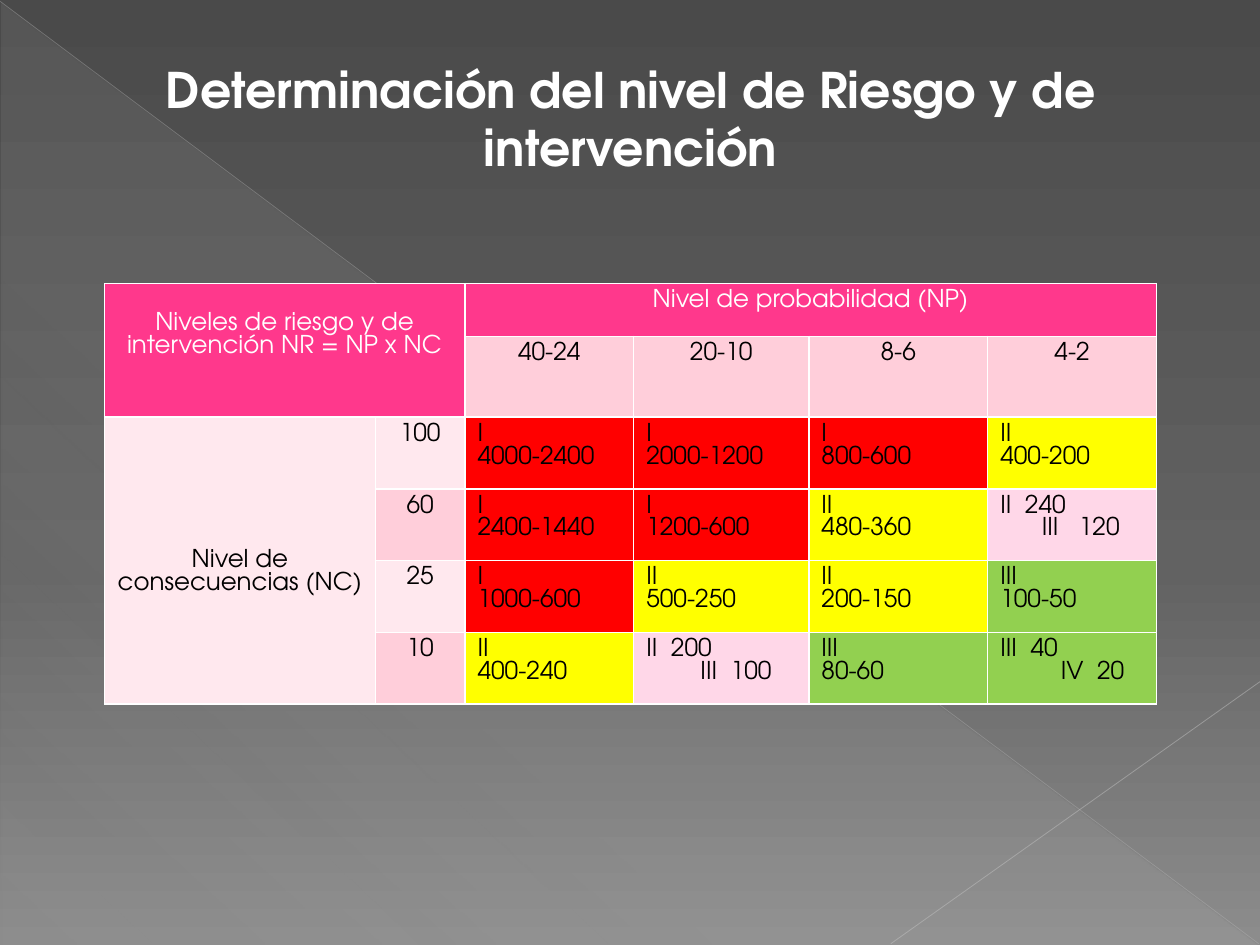
from dataclasses import dataclass
from typing import NamedTuple

from lxml.etree import SubElement
from pptx import Presentation
from pptx.dml.color import RGBColor
from pptx.enum.shapes import MSO_CONNECTOR, MSO_SHAPE
from pptx.enum.text import MSO_ANCHOR, MSO_AUTO_SIZE, PP_ALIGN
from pptx.oxml.ns import qn
from pptx.util import Inches, Pt


@dataclass(frozen=True)
class Theme:
    font: str = "TeX Gyre Adventor"
    title_size: float = 28
    table_size: float = 14
    white: str = "FFFFFF"
    black: str = "000000"
    header: str = "FF388C"
    band: str = "FFCEDA"
    pale_band: str = "FFE8EE"
    high: str = "FF0000"
    medium: str = "FFFF00"
    mixed: str = "FFD7E8"
    low: str = "92D050"


class Stop(NamedTuple):
    position: int
    color: str
    opacity: int = 100


class Ray(NamedTuple):
    start: tuple[float, float]
    end: tuple[float, float]
    color: str
    width: float
    opacity: int


class Risk(NamedTuple):
    level: str
    span: str
    fill: str
    indent: float = 0


THEME = Theme()
BACKGROUND = [Stop(0, "4A4A4A"), Stop(60, "626262"), Stop(100, "8C8C8C")]
SHEEN = [Stop(0, "D2D2D2", 10), Stop(70, "D2D2D2", 8), Stop(100, "D2D2D2", 1)]
RAYS = [
    Ray((0, 0.01), (9.99, 7.49), "BFBFBF", 0.39, 35),
    Ray((10, 5.41), (7.07, 7.49), "C6C6C6", 0.47, 45),
]
COLUMN_WIDTHS = [2.15, 0.71, 1.34, 1.39, 1.42, 1.34]
ROW_HEIGHTS = [0.42, 0.64] + [0.57] * 4
LOWERED_TOP = 0.23
PROBABILITIES = ["40-24", "20-10", "8-6", "4-2"]
RISKS = {
    "100": [
        Risk("I", "4000-2400", THEME.high),
        Risk("I", "2000-1200", THEME.high),
        Risk("I", "800-600", THEME.high),
        Risk("II", "400-200", THEME.medium),
    ],
    "60": [
        Risk("I", "2400-1440", THEME.high),
        Risk("I", "1200-600", THEME.high),
        Risk("II", "480-360", THEME.medium),
        Risk("II  240", "III   120", THEME.mixed, 0.33),
    ],
    "25": [
        Risk("I", "1000-600", THEME.high),
        Risk("II", "500-250", THEME.medium),
        Risk("II", "200-150", THEME.medium),
        Risk("III", "100-50", THEME.low),
    ],
    "10": [
        Risk("II", "400-240", THEME.medium),
        Risk("II  200", "III  100", THEME.mixed, 0.43),
        Risk("III", "80-60", THEME.low),
        Risk("III  40", "IV  20", THEME.low, 0.48),
    ],
}


def set_opacity(color, opacity: int) -> None:
    SubElement(color, qn("a:alpha"), val=str(opacity * 1000))


def set_gradient(owner, fill, stops: list[Stop], angle: int) -> None:
    fill.gradient()
    gradient = next(owner.element.iter(qn("a:gradFill")))
    stop_list = gradient.find(qn("a:gsLst"))
    for old_stop in list(stop_list):
        stop_list.remove(old_stop)
    for stop in stops:
        entry = SubElement(stop_list, qn("a:gs"), pos=str(stop.position * 1000))
        color = SubElement(entry, qn("a:srgbClr"), val=stop.color)
        if stop.opacity < 100:
            set_opacity(color, stop.opacity)
    gradient.find(qn("a:lin")).set("ang", str(angle * 60000))


def style_paragraph(paragraph, size: float, color: str, alignment) -> None:
    paragraph.alignment = alignment
    paragraph.font.name = THEME.font
    paragraph.font.size = Pt(size)
    paragraph.font.color.rgb = RGBColor.from_string(color)


def draw_backdrop(page) -> None:
    set_gradient(page, page.background.fill, BACKGROUND, 90)
    triangle = page.shapes.add_shape(
        MSO_SHAPE.RIGHT_TRIANGLE, Inches(0.01), Inches(0.02), Inches(9.98), Inches(7.48)
    )
    triangle.shadow.inherit = False
    triangle.line.fill.background()
    set_gradient(triangle, triangle.fill, SHEEN, 133)
    for ray in RAYS:
        ends = [Inches(value) for value in ray.start + ray.end]
        line = page.shapes.add_connector(MSO_CONNECTOR.STRAIGHT, *ends)
        line.line.width = Pt(ray.width)
        line.line.color.rgb = RGBColor.from_string(ray.color)
        set_opacity(next(line.element.iter(qn("a:srgbClr"))), ray.opacity)
        SubElement(line.element.spPr, qn("a:effectLst"))


def draw_title(page, text: str) -> None:
    box = page.shapes.add_textbox(Inches(0.28), Inches(0.42), Inches(9.45), Inches(0.57))
    frame = box.text_frame
    frame.word_wrap = True
    frame.auto_size = MSO_AUTO_SIZE.SHAPE_TO_FIT_TEXT
    frame.text = text
    style_paragraph(frame.paragraphs[0], THEME.title_size, THEME.white, PP_ALIGN.CENTER)
    frame.paragraphs[0].font.bold = True


def add_borders(cell) -> None:
    properties = cell._tc.get_or_add_tcPr()
    for side in ("lnL", "lnR", "lnT", "lnB"):
        border = SubElement(properties, qn(f"a:{side}"), w=str(Pt(1)))
        fill = SubElement(border, qn("a:solidFill"))
        SubElement(fill, qn("a:srgbClr"), val=THEME.white)


def fill_cell(cell, text: str, fill: str, color: str = THEME.black,
              alignment=PP_ALIGN.CENTER, top: float = 0.05) -> None:
    cell.fill.solid()
    cell.fill.fore_color.rgb = RGBColor.from_string(fill)
    cell.margin_top = Inches(top)
    cell.text = text
    for paragraph in cell.text_frame.paragraphs:
        style_paragraph(paragraph, THEME.table_size, color, alignment)


def fill_risk(cell, risk: Risk) -> None:
    fill_cell(cell, f"{risk.level}\n{risk.span}", risk.fill, alignment=PP_ALIGN.LEFT)
    if risk.indent:
        properties = cell.text_frame.paragraphs[1]._p.get_or_add_pPr()
        properties.set("marL", str(Inches(risk.indent)))


def draw_risk_table(page) -> None:
    table = page.shapes.add_table(
        len(ROW_HEIGHTS), len(COLUMN_WIDTHS), Inches(0.83), Inches(2.25),
        Inches(sum(COLUMN_WIDTHS)), Inches(sum(ROW_HEIGHTS)),
    ).table
    table.first_row = table.horz_banding = False
    for column, width in zip(table.columns, COLUMN_WIDTHS):
        column.width = Inches(width)
    for row, height in zip(table.rows, ROW_HEIGHTS):
        row.height = Inches(height)
    for cell in table.iter_cells():
        add_borders(cell)

    table.cell(0, 0).merge(table.cell(1, 1))
    table.cell(0, 2).merge(table.cell(0, 5))
    table.cell(2, 0).merge(table.cell(5, 0))
    fill_cell(table.cell(0, 0), "Niveles de riesgo y de intervención NR = NP x NC",
              THEME.header, THEME.white, top=LOWERED_TOP)
    fill_cell(table.cell(0, 2), "Nivel de probabilidad (NP)", THEME.header, THEME.white)
    fill_cell(table.cell(2, 0), "Nivel de consecuencias (NC)", THEME.pale_band, top=LOWERED_TOP)
    table.cell(2, 0).vertical_anchor = MSO_ANCHOR.MIDDLE

    for column, probability in enumerate(PROBABILITIES, start=2):
        fill_cell(table.cell(1, column), probability, THEME.band)
    for row, (consequence, risks) in enumerate(RISKS.items(), start=2):
        fill_cell(table.cell(row, 1), consequence, THEME.band if row % 2 else THEME.pale_band)
        for column, risk in enumerate(risks, start=2):
            fill_risk(table.cell(row, column), risk)


def main() -> None:
    deck = Presentation()
    deck.slide_width, deck.slide_height = Inches(10), Inches(7.5)
    page = deck.slides.add_slide(deck.slide_layouts[6])
    draw_backdrop(page)
    draw_risk_table(page)
    draw_title(page, "Determinación del nivel de Riesgo y de intervención")
    deck.save("out.pptx")


if __name__ == "__main__":
    main()
